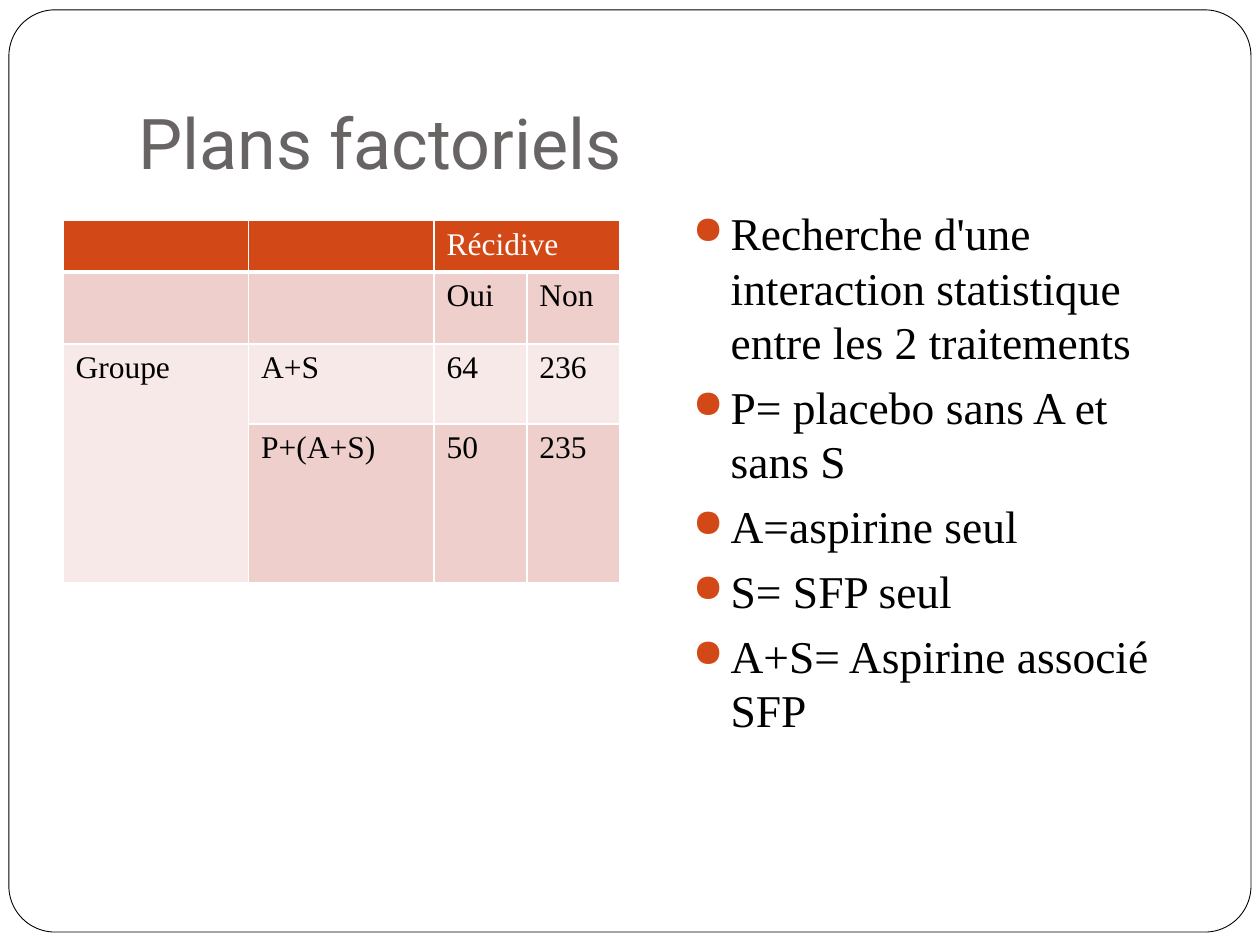
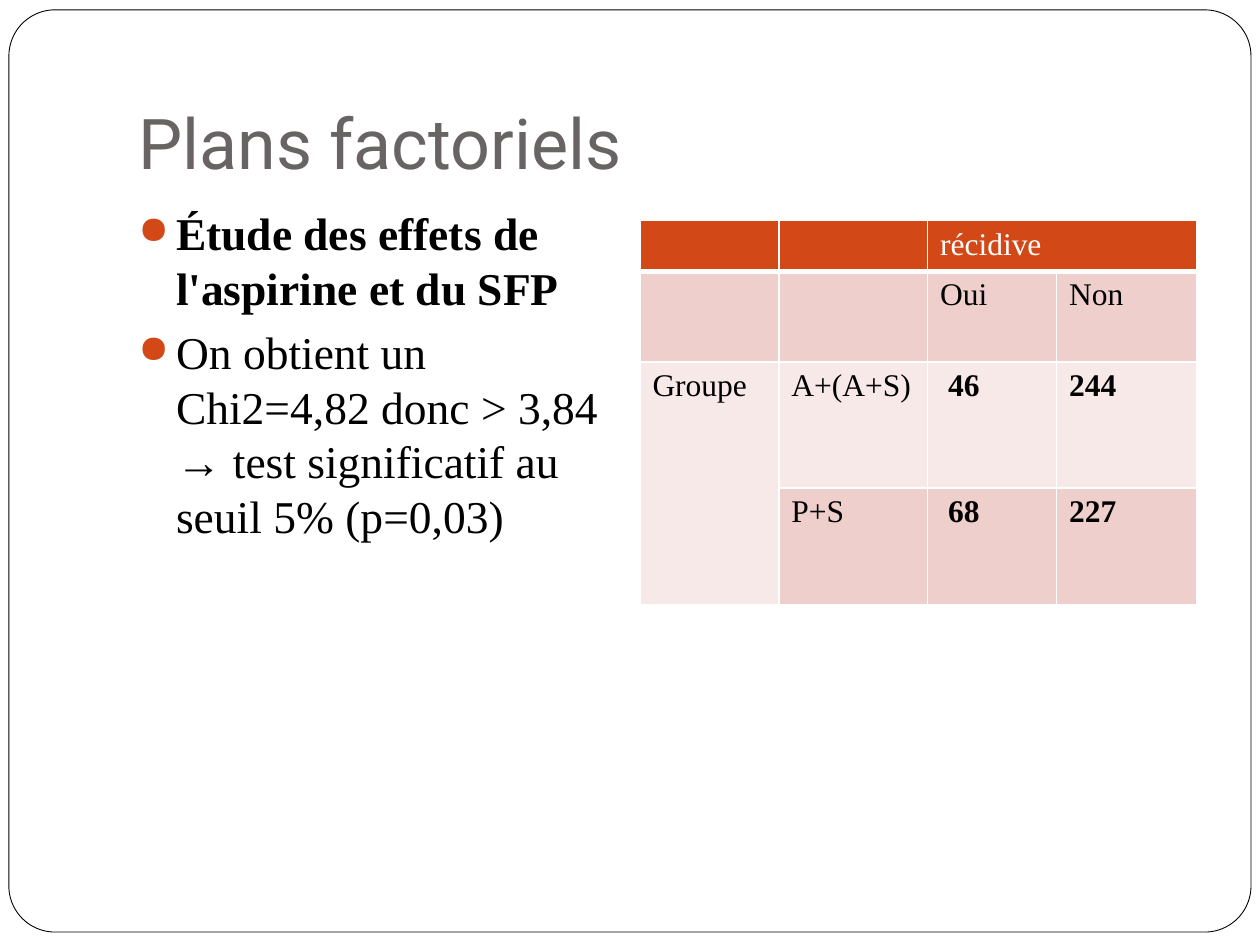
from lxml import etree
from pptx import Presentation, util as u
from pptx.dml.color import RGBColor
from pptx.enum import shapes, text
from pptx.oxml import ns

ACCENT = RGBColor(0xD3, 0x48, 0x17)
BAND_DARK = RGBColor(0xEF, 0xCF, 0xCC)
BAND_LIGHT = RGBColor(0xF7, 0xE9, 0xE8)
GREY = RGBColor(0x69, 0x64, 0x64)
BLACK = RGBColor(0, 0, 0)
WHITE = RGBColor(0xFF, 0xFF, 0xFF)

TITLE = {"name": "Roboto", "size": u.Pt(40), "bold": False}
BODY = {"name": "Times New Roman", "size": u.Pt(26), "bold": False}
CELL = {"name": "Times New Roman", "size": u.Pt(18), "bold": False}
ROW_FILLS = [ACCENT, BAND_DARK, BAND_LIGHT, BAND_DARK]
HANGING = u.Cm(0.76)


def set_attrs(obj, values):
    """Set every attribute of a dict on an object."""
    for key, value in values.items():
        setattr(obj, key, value)


def add_xml(parent, tag, **attrs):
    """Append a drawing element to a parent and return it."""
    return etree.SubElement(parent, ns.qn("a:" + tag), attrs)


class Deck:
    """Holds the shared style and the current slide."""

    def __init__(self):
        """Open an empty 4:3 presentation."""
        self.prs = Presentation()
        set_attrs(self.prs, {"slide_width": u.Cm(25.4), "slide_height": u.Cm(19.05)})

    def new_slide(self, title):
        """Start a slide with its rounded frame and title."""
        self.s = self.prs.slides.add_slide(self.prs.slide_layouts[6])
        self.frame()
        tf = self.text_box(2.54, 0.76, 21.59, 3.18)
        set_attrs(tf, {"vertical_anchor": text.MSO_ANCHOR.BOTTOM,
                       "margin_bottom": u.Cm(0.25)})
        self.add_words(tf.paragraphs[0], title, GREY, TITLE)

    def frame(self):
        """Draw the thin rounded frame around the slide."""
        sp = self.s.shapes.add_shape(shapes.MSO_SHAPE.ROUNDED_RECTANGLE,
                                     u.Cm(0.18), u.Cm(0.2), u.Cm(25.04), u.Cm(18.59))
        sp.adjustments[0] = 0.05
        sp.shadow.inherit = False
        sp.fill.solid()
        sp.fill.fore_color.rgb = WHITE
        sp.line.color.rgb = BLACK
        sp.line.width = u.Pt(0.5)

    def text_box(self, *box):
        """Add a wrapping text box and return its text frame."""
        tf = self.s.shapes.add_textbox(*map(u.Cm, box)).text_frame
        tf.word_wrap = True
        return tf

    def add_words(self, p, words, color, style, **changes):
        """Add a formatted run to a paragraph."""
        r = p.add_run()
        r.text = words
        set_attrs(r.font, {**style, **changes})
        r.font.color.rgb = color

    def bullets(self, left, items):
        """Add a bulleted column of (words, bold) items."""
        tf = self.text_box(left, 4.01, 10.41, 12.7)
        for i, (words, bold) in enumerate(items):
            p = tf.add_paragraph() if i else tf.paragraphs[0]
            p.space_before = u.Pt(5.8)
            pPr = p._p.get_or_add_pPr()
            pPr.set("marL", str(HANGING))
            pPr.set("indent", str(-HANGING))
            add_xml(add_xml(pPr, "buClr"), "srgbClr", val=str(ACCENT))
            add_xml(pPr, "buSzPct", val="85000")
            add_xml(pPr, "buChar", char="●")
            self.add_words(p, words, BLACK, BODY, bold=bold)

    def borders(self, cell, bottom):
        """Give a cell white borders, with its own bottom width."""
        tcPr = cell._tc.get_or_add_tcPr()
        for side, width in (("L", 1), ("R", 1), ("T", 1), ("B", bottom)):
            ln = add_xml(tcPr, "ln" + side, w=str(u.Pt(width)))
            add_xml(add_xml(ln, "solidFill"), "srgbClr", val=str(WHITE))

    def table(self, left, widths, heights, rows, bold_counts=False):
        """Add a contingency table with a merged header and group cell."""
        tbl = self.s.shapes.add_table(
            len(heights), len(widths), u.Cm(left), u.Cm(4.45),
            u.Cm(sum(widths)), u.Cm(sum(heights))).table
        for col, width in zip(tbl.columns, widths):
            col.width = u.Cm(width)
        for row, height in zip(tbl.rows, heights):
            row.height = u.Cm(height)
        for i, (fill, row) in enumerate(zip(ROW_FILLS, rows)):
            for j, words in enumerate(row):
                cell = tbl.cell(i, j)
                self.borders(cell, 1 if i else 3)
                cell.fill.solid()
                cell.fill.fore_color.rgb = fill
                if words:
                    self.add_words(cell.text_frame.paragraphs[0], words,
                                   BLACK if i else WHITE, CELL,
                                   bold=bold_counts and i > 1 and j > 1)
        tbl.cell(0, 2).merge(tbl.cell(0, 3))
        tbl.cell(2, 0).merge(tbl.cell(3, 0))


deck = Deck()

deck.new_slide("Plans factoriels ")
deck.table(1.27, [3.74, 3.74, 1.87, 1.87], [1.03, 1.45, 1.62, 3.19], [
    ["", "", "Récidive ", ""],
    ["", "", "Oui ", "Non "],
    ["Groupe ", "A+S", "64", "236"],
    ["", "P+(A+S)", "50", "235"],
])
deck.bullets(13.72, [
    ("Recherche d'une interaction statistique entre les 2 traitements", False),
    ("P= placebo sans A et sans S", False),
    ("A=aspirine seul", False),
    ("S= SFP seul", False),
    ("A+S= Aspirine associé SFP", False),
])

deck.new_slide("Plans factoriels")
deck.bullets(2.54, [
    ("Étude des effets de l'aspirine et du SFP", True),
    ("On obtient un Chi2=4,82 donc > 3,84 → test significatif au seuil 5% (p=0,03)",
     False),
])
deck.table(12.9, [2.8, 3, 2.6, 2.82], [0.94, 1.83, 2.54, 2.36], [
    ["", "", "récidive", ""],
    ["", "", "Oui ", "Non "],
    ["Groupe ", "A+(A+S)", " 46", "244"],
    ["", "P+S", " 68", "227"],
], bold_counts=True)

deck.prs.save("out.pptx")
